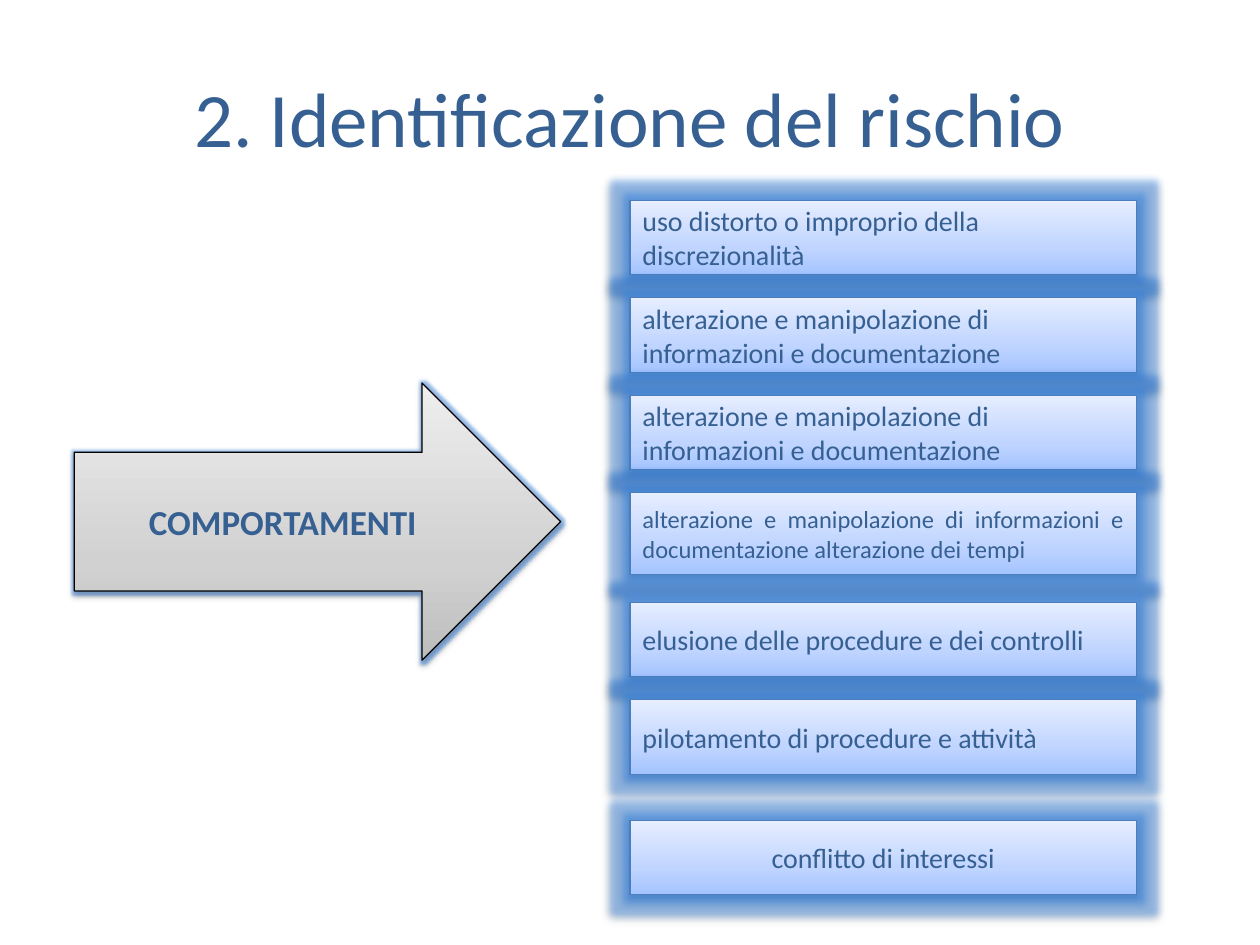
from copy import deepcopy

from lxml import etree
from pptx import Presentation
from pptx.dml.color import RGBColor
from pptx.enum import shapes, text
from pptx.oxml import ns
from pptx.util import Pt

TEXT_BLUE = RGBColor(0x37, 0x60, 0x92)
BORDER_BLUE = RGBColor(0x4B, 0x7E, 0xBC)
GLOW_BLUE = RGBColor(0x4F, 0x81, 0xBD)
BLACK = RGBColor(0, 0, 0)
BLUES = [RGBColor(0xA4, 0xC4, 0xFF), RGBColor(0xBF, 0xD4, 0xFF), RGBColor(0xE6, 0xEE, 0xFF)]
GREYS = [RGBColor(0xBD, 0xBD, 0xBD), RGBColor(0xD1, 0xD1, 0xD1), RGBColor(0xEE, 0xEE, 0xEE)]
STOPS = [0, 0.35, 1]

LEFT, CENTER, JUSTIFY = text.PP_ALIGN.LEFT, text.PP_ALIGN.CENTER, text.PP_ALIGN.JUSTIFY
ROW_HEIGHT = 42.5
ROW_GAP = 13.2
# wording, alignment, size, height, extra space above
BEHAVIOURS = [
    ("uso distorto o improprio della discrezionalità", LEFT, 16, ROW_HEIGHT, 0),
    ("alterazione e manipolazione di informazioni e documentazione", LEFT, 16, ROW_HEIGHT, 0),
    ("alterazione e manipolazione di informazioni e documentazione", LEFT, 16, ROW_HEIGHT, 0),
    ("alterazione e manipolazione di informazioni e documentazione alterazione dei tempi",
     JUSTIFY, 14, 46.8, 0),
    ("elusione delle procedure e dei controlli", JUSTIFY, 16, ROW_HEIGHT, 2.6),
    ("pilotamento di procedure e attività", LEFT, 16, ROW_HEIGHT, 0),
    ("conflitto di interessi", CENTER, 16, ROW_HEIGHT, 13.2),
]


def write(shape, wording, size=16, align=LEFT, bold=False):
    frame = shape.text_frame
    frame.word_wrap = True
    frame.vertical_anchor = text.MSO_ANCHOR.MIDDLE
    paragraph = frame.paragraphs[0]
    paragraph.alignment = align
    run = paragraph.add_run()
    run.text = wording
    run.font.name = "Calibri"
    run.font.size = Pt(size)
    run.font.bold = bold
    run.font.color.rgb = TEXT_BLUE


def add_effects(shape, glow):
    """Give the shape a blue glow of the given radius and a soft shadow below."""
    shape.shadow.inherit = False
    effects = shape._element.spPr.find(ns.qn("a:effectLst"))
    effects.extend(etree.fromstring(f"""
        <a:effectLst {ns.nsdecls("a")}>
          <a:glow rad="{Pt(glow)}"><a:srgbClr val="{GLOW_BLUE}">
            <a:satMod val="175000"/><a:alpha val="40000"/></a:srgbClr></a:glow>
          <a:outerShdw blurRad="{Pt(3.1)}" dist="{Pt(1.6)}" dir="5400000" rotWithShape="0">
            <a:srgbClr val="{BLACK}"><a:alpha val="38000"/></a:srgbClr></a:outerShdw>
        </a:effectLst>"""))


def add_panel(slide, kind, box, colours, border, glow):
    panel = slide.shapes.add_shape(kind, *map(Pt, box))
    panel.fill.gradient()
    panel.fill.gradient_angle = 90
    stop_list = panel._element.spPr.find(".//" + ns.qn("a:gsLst"))
    stop_list.append(deepcopy(stop_list[0]))
    for stop, position, colour in zip(panel.fill.gradient_stops, STOPS, colours):
        stop.position = position
        stop.color.rgb = colour
    panel.line.color.rgb = border
    panel.line.width = Pt(0.75)
    add_effects(panel, glow)
    return panel


def add_title(slide, box):
    title = slide.shapes.add_textbox(*map(Pt, box))
    write(title, "2. Identificazione del rischio", size=44, align=CENTER)


def add_arrow(slide, box):
    arrow = add_panel(slide, shapes.MSO_SHAPE.RIGHT_ARROW, box, GREYS, BLACK, glow=3)
    write(arrow, "COMPORTAMENTI", size=20, align=CENTER, bold=True)


def add_behaviours(slide, left, top, width):
    for wording, align, size, height, extra in BEHAVIOURS:
        top += extra
        row = add_panel(slide, shapes.MSO_SHAPE.RECTANGLE, (left, top, width, height),
                        BLUES, BORDER_BLUE, glow=8)
        write(row, wording, size=size, align=align)
        top += height + ROW_GAP


def main():
    deck = Presentation()
    deck.slide_width, deck.slide_height = Pt(720), Pt(540)
    slide = deck.slides.add_slide(deck.slide_layouts[6])
    add_title(slide, (36, 21.6, 648, 90))
    add_arrow(slide, (42.5, 218.9, 277.9, 158.4))
    add_behaviours(slide, left=360, top=114.5, width=289.4)
    deck.save("out.pptx")


if __name__ == "__main__":
    main()
